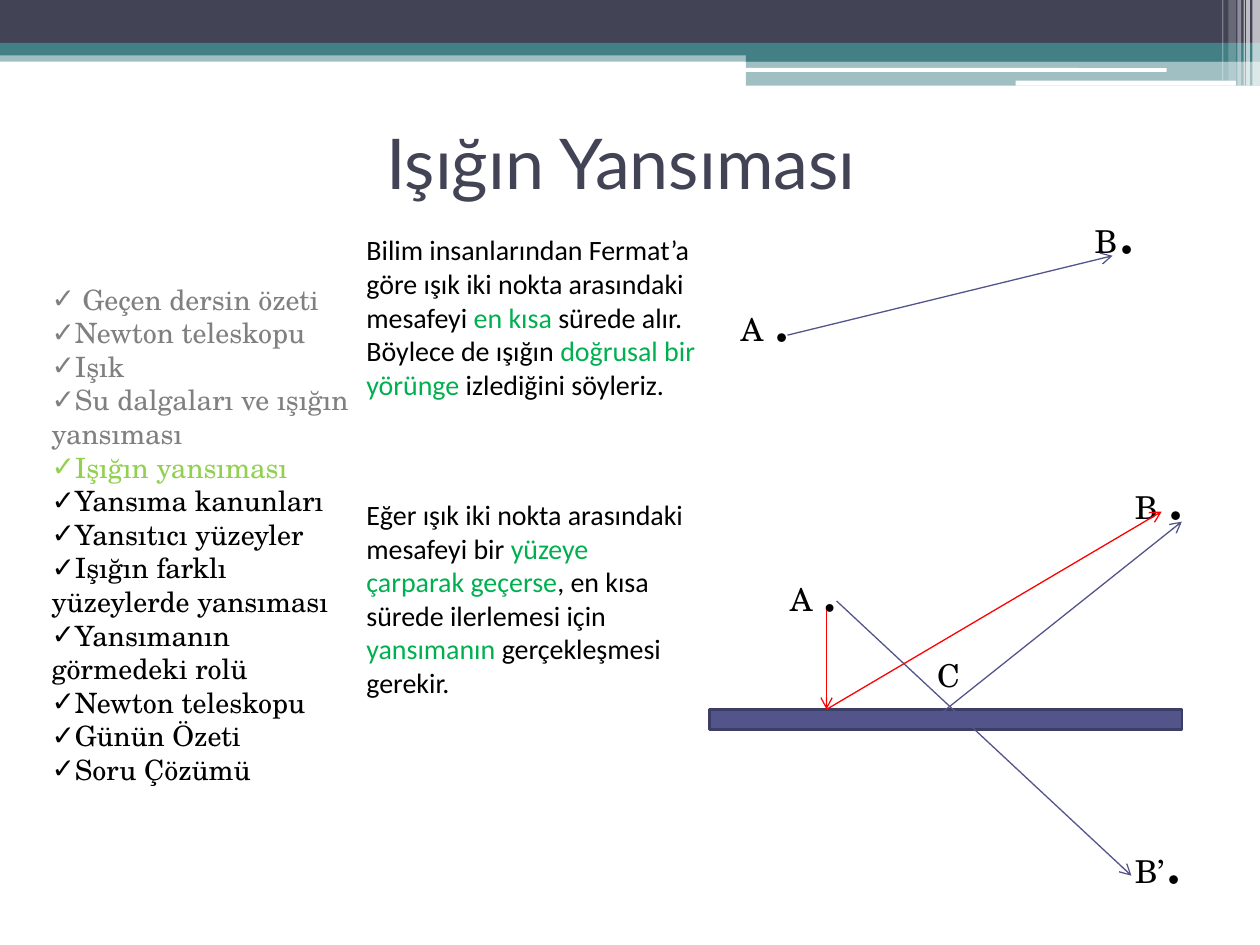
from dataclasses import dataclass

from lxml.etree import SubElement
from pptx import Presentation
from pptx.dml.color import RGBColor
from pptx.enum.shapes import MSO_CONNECTOR, MSO_SHAPE
from pptx.enum.text import MSO_ANCHOR, PP_ALIGN
from pptx.oxml.ns import qn
from pptx.util import Inches, Pt


@dataclass(frozen=True)
class Theme:
    """Colours, fonts and type sizes of the deck."""
    navy: str = "424456"
    teal: str = "438086"
    white: str = "FFFFFF"
    black: str = "000000"
    grey: str = "808080"
    lime: str = "92D050"
    green: str = "00B050"
    red: str = "FF0000"
    indigo: str = "53548A"
    indigo_dark: str = "3D3E66"
    title_font: str = "Lato"
    body_font: str = "Calibri"
    serif_font: str = "TeX Gyre Schola"
    title_size: int = 40
    text_size: int = 16
    label_size: int = 18


THEME = Theme()

BANDS = [
    ((0, 0.4, 10, 0.09), THEME.teal, 50),
    ((0, 0, 10, 0.34), THEME.navy, 100),
    ((0, 0.34, 10, 0.1), THEME.teal, 100),
    ((5.92, 0.39, 4.08, 0.1), THEME.teal, 100),
    ((5.92, 0.48, 4.08, 0.2), THEME.teal, 50),
]
PILLS = [(5.91, 0.54, 3.35, 0.03), (8.06, 0.64, 1.75, 0.04)]
STRIPES = [
    (9.94, 0.06, 0.68, 65), (9.89, 0.03, 0.68, 65), (9.87, 0.01, 0.68, 60),
    (9.82, 0.03, 0.68, 40), (9.75, 0.06, 0.64, 20), (9.7, 0.01, 0.64, 30),
]
TOPICS = [
    (THEME.grey, [" Geçen dersin özeti", "Newton teleskopu", "Işık",
                  "Su dalgaları ve ışığın yansıması"]),
    (THEME.lime, ["Işığın yansıması"]),
    (THEME.black, ["Yansıma kanunları", "Yansıtıcı yüzeyler",
                   "Işığın farklı yüzeylerde yansıması",
                   "Yansımanın görmedeki rolü", "Newton teleskopu",
                   "Günün Özeti", "Soru Çözümü"]),
]
FERMAT = [
    ("Bilim insanlarından Fermat’a göre ışık iki nokta arasındaki mesafeyi ", THEME.black),
    ("en kısa ", THEME.green),
    ("sürede alır. Böylece de ışığın ", THEME.black),
    ("doğrusal bir yörünge ", THEME.green),
    ("izlediğini söyleriz.", THEME.black),
]
REFLECTION = [
    ("Eğer ışık iki nokta arasındaki mesafeyi bir ", THEME.black),
    ("yüzeye çarparak geçerse", THEME.green),
    (", en kısa sürede ilerlemesi için ", THEME.black),
    ("yansımanın", THEME.green),
    (" gerçekleşmesi gerekir.", THEME.black),
]


def place(shape, box):
    """Move and size a shape to a box given in inches."""
    shape.left, shape.top, shape.width, shape.height = map(Inches, box)


def style(font, name, size, colour):
    """Set the face, size and colour of a font."""
    font.name = name
    font.size = Pt(size)
    font.color.rgb = RGBColor.from_string(colour)


def add_block(page, box, colour, opacity=100, kind=MSO_SHAPE.RECTANGLE):
    """Add a filled shape without outline or shadow."""
    shape = page.shapes.add_shape(kind, *map(Inches, box))
    shape.shadow.inherit = False
    shape.fill.solid()
    shape.fill.fore_color.rgb = RGBColor.from_string(colour)
    shape.line.fill.background()
    if opacity < 100:
        tint = shape.fill._xPr.find(".//" + qn("a:srgbClr"))
        SubElement(tint, qn("a:alpha"), val=str(opacity * 1000))
    return shape


def add_ray(page, start, end, colour):
    """Add a thin arrow between two points."""
    ray = page.shapes.add_connector(MSO_CONNECTOR.STRAIGHT, *map(Inches, start + end))
    ray.line.color.rgb = RGBColor.from_string(colour)
    ray.line.width = Pt(0.75)
    SubElement(ray.line._get_or_add_ln(), qn("a:tailEnd"), type="arrow")
    SubElement(ray._element.spPr, qn("a:effectLst"))


def add_paragraph_box(page, box):
    """Add a wrapping text box and return its first paragraph."""
    frame = page.shapes.add_textbox(*map(Inches, box)).text_frame
    frame.word_wrap = True
    return frame.paragraphs[0]


def add_label(page, box, letter, dot_size=None):
    """Add a point label, with a large dot when it has a size."""
    para = add_paragraph_box(page, box)
    style(para.font, THEME.serif_font, THEME.label_size, THEME.black)
    para.add_run().text = letter
    if dot_size:
        dot = para.add_run()
        dot.text = "."
        dot.font.size = Pt(dot_size)


def add_passage(page, box, pieces):
    """Add a passage whose key words are coloured."""
    para = add_paragraph_box(page, box)
    para.font.name = THEME.body_font
    para.font.size = Pt(THEME.text_size)
    for text, colour in pieces:
        span = para.add_run()
        span.text = text
        span.font.color.rgb = RGBColor.from_string(colour)


def add_header(page):
    """Draw the bands, pills and stripes along the top."""
    for box, colour, opacity in BANDS:
        add_block(page, box, colour, opacity)
    for box in PILLS:
        add_block(page, box, THEME.white, kind=MSO_SHAPE.ROUNDED_RECTANGLE)
    for left, width, height, opacity in STRIPES:
        add_block(page, (left, 0, width, height), THEME.white, opacity)


def fill_title(title, box):
    """Place and format the title."""
    place(title, box)
    title.text_frame.vertical_anchor = MSO_ANCHOR.MIDDLE
    para = title.text_frame.paragraphs[0]
    para.text = "Işığın Yansıması "
    para.alignment = PP_ALIGN.CENTER
    style(para.font, THEME.title_font, THEME.title_size, THEME.navy)


def fill_topics(body, box):
    """Place the ticked list of topics."""
    place(body, box)
    frame = body.text_frame
    frame.vertical_anchor = MSO_ANCHOR.TOP
    topics = [(text, colour) for colour, texts in TOPICS for text in texts]
    for index, (text, colour) in enumerate(topics):
        para = frame.add_paragraph() if index else frame.paragraphs[0]
        para.text = text
        para.space_before = Pt(0)
        style(para.font, THEME.serif_font, THEME.text_size, colour)
        properties = para._p.get_or_add_pPr()
        properties.set("marL", "0")
        properties.set("indent", "0")
        bullet = properties.makeelement(qn("a:buChar"), {"char": "✓"})
        properties.find(qn("a:defRPr")).addprevious(bullet)


def add_direct_path(page, left, top):
    """Draw the straight path from A to B."""
    add_label(page, (left, top + 0.7, 0.78, 0.77), "A ", 40)
    add_label(page, (left + 2.81, top, 0.63, 0.77), "B", 40)
    add_ray(page, (left + 0.47, top + 1.25), (left + 3.05, top + 0.62), THEME.indigo)


def add_mirror_paths(page, left, top):
    """Draw the mirror with the reflected, virtual and longer paths."""
    mirror = add_block(page, (left, top + 2.11, 3.75, 0.16), THEME.indigo)
    mirror.line.color.rgb = RGBColor.from_string(THEME.indigo_dark)
    mirror.line.width = Pt(1.5)
    add_label(page, (left + 0.54, top + 0.78, 0.86, 0.71), "A ", 36)
    add_label(page, (left + 3.28, top, 0.63, 0.77), "B ", 40)
    add_label(page, (left + 3.28, top + 2.89, 0.7, 0.77), "B’", 40)
    add_label(page, (left + 1.71, top + 1.64, 0.47, 0.4), "C")
    foot = (left + 0.93, top + 2.11)
    add_ray(page, (left + 1.01, top + 1.25), (left + 3.35, top + 3.43), THEME.indigo)
    add_ray(page, (left + 1.79, top + 2.18), (left + 3.75, top + 0.62), THEME.indigo)
    add_ray(page, (left + 0.93, top + 1.32), foot, THEME.red)
    add_ray(page, foot, (left + 3.59, top + 0.54), THEME.red)


def main():
    """Build and save the deck."""
    deck = Presentation()
    deck.slide_width, deck.slide_height = Inches(10), Inches(7.5)
    page = deck.slides.add_slide(deck.slide_layouts[1])
    add_header(page)
    fill_title(page.shapes.title, (0.5, 0.7, 9, 1.17))
    fill_topics(page.placeholders[1], (0.31, 2.19, 2.58, 4.14))
    add_passage(page, (2.81, 1.8, 2.89, 1.45), FERMAT)
    add_passage(page, (2.81, 3.9, 2.73, 1.72), REFLECTION)
    add_direct_path(page, 5.78, 1.41)
    add_mirror_paths(page, 5.63, 3.52)
    deck.save("out.pptx")


if __name__ == "__main__":
    main()
